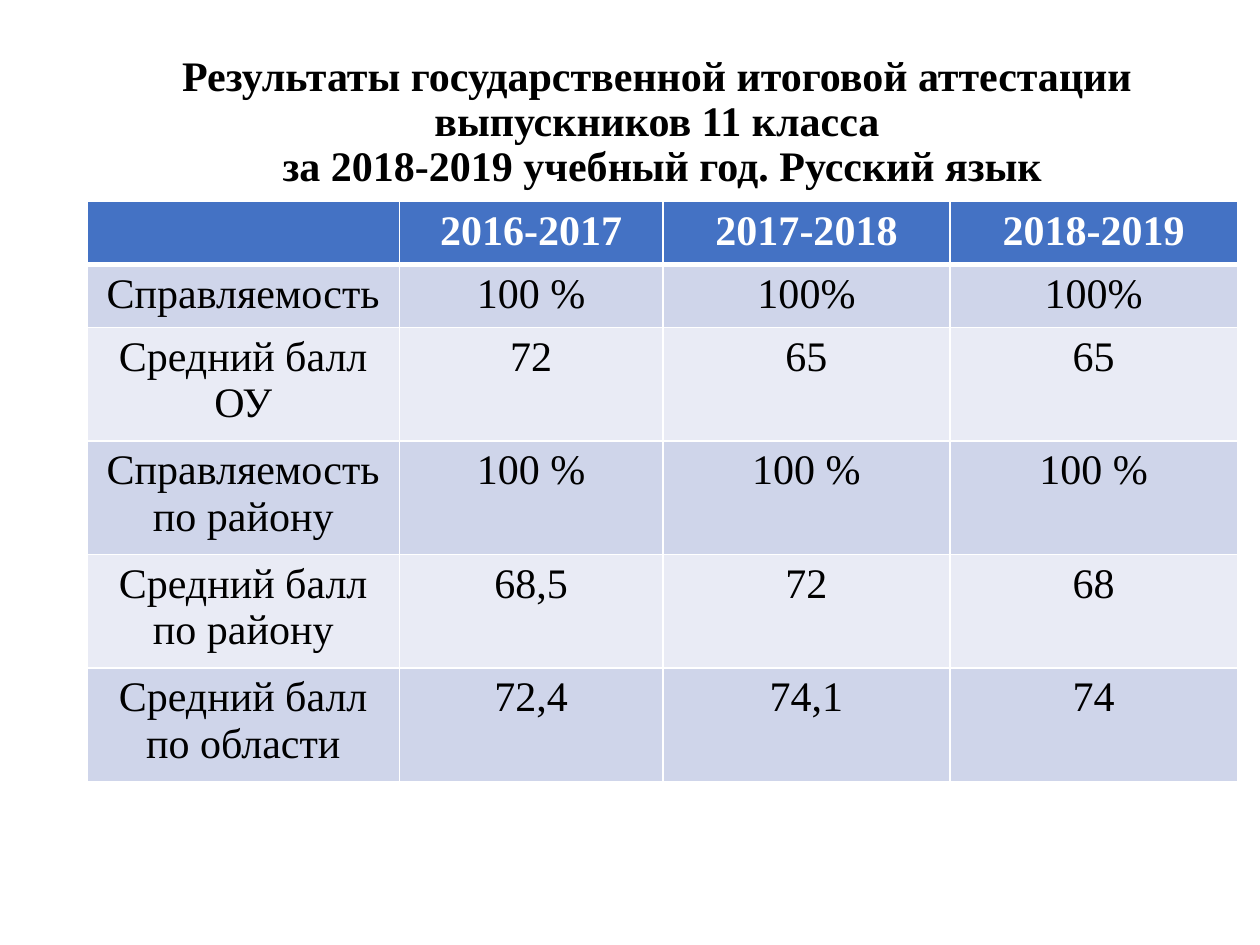
"""Build a slide with the final exam results in Russian for three school years."""
from dataclasses import dataclass

from lxml import etree
from pptx import Presentation
from pptx.dml.color import RGBColor
from pptx.enum.text import MSO_ANCHOR, PP_ALIGN
from pptx.oxml.ns import qn
from pptx.util import Pt

CENTER = PP_ALIGN.CENTER
MIDDLE = MSO_ANCHOR.MIDDLE

HEADING = (
    "Результаты государственной итоговой аттестации \v"
    "выпускников 11 класса \v"
    "за 2018-2019 учебный год. Русский язык"
)
RESULTS = [
    ("", "2016-2017", "2017-2018", "2018-2019"),
    ("Справляемость", "100 %", "100%", "100%"),
    ("Средний балл ОУ", "72", "65", "65"),
    ("Справляемость по району", "100 %", "100 %", "100 %"),
    ("Средний балл по району", "68,5", "72", "68"),
    ("Средний балл по области", "72,4", "74,1", "74"),
]


@dataclass(frozen=True)
class Theme:
    font: str = "Times New Roman"
    size: int = 24
    text: str = "000000"
    header_text: str = "FFFFFF"
    header_fill: str = "4472C4"
    bands: tuple = ("E9EBF5", "CFD5EA")
    rule: str = "FFFFFF"
    rule_width: int = 1
    header_rule_width: int = 3


THEME = Theme()
LEFT, WIDTH = 49.7, 657.4
HEADING_TOP, HEADING_HEIGHT = 15.1, 110.2
RESULTS_TOP, ROW_HEIGHT = 115.2, 29.5
COLUMN_WIDTHS = (178.6, 150.5, 164.15, 164.15)


def style(paragraph, color, bold):
    paragraph.alignment = CENTER
    font = paragraph.font
    font.name = THEME.font
    font.size = Pt(THEME.size)
    font.bold = bold
    font.color.rgb = RGBColor.from_string(color)


def add_borders(cell, top_width, bottom_width):
    properties = cell._tc.get_or_add_tcPr()
    widths = {"L": THEME.rule_width, "R": THEME.rule_width, "T": top_width, "B": bottom_width}
    for position, (side, width) in enumerate(widths.items()):
        line = etree.Element(qn(f"a:ln{side}"), w=str(Pt(width)))
        fill = etree.SubElement(line, qn("a:solidFill"))
        etree.SubElement(fill, qn("a:srgbClr"), val=THEME.rule)
        properties.insert(position, line)


def add_heading(slide):
    box = slide.shapes.add_textbox(Pt(LEFT), Pt(HEADING_TOP), Pt(WIDTH), Pt(HEADING_HEIGHT))
    frame = box.text_frame
    frame.word_wrap = True
    frame.vertical_anchor = MIDDLE
    heading = frame.paragraphs[0]
    heading.text = HEADING
    heading.line_spacing = 0.9
    style(heading, THEME.text, True)


def add_results(slide):
    table = slide.shapes.add_table(
        len(RESULTS), len(COLUMN_WIDTHS), Pt(LEFT), Pt(RESULTS_TOP),
        Pt(WIDTH), Pt(ROW_HEIGHT * len(RESULTS)),
    ).table
    for column, width in zip(table.columns, COLUMN_WIDTHS):
        column.width = Pt(width)
    for row, values in enumerate(RESULTS):
        header = row == 0
        fill = THEME.header_fill if header else THEME.bands[row % 2]
        color = THEME.header_text if header else THEME.text
        top = THEME.header_rule_width if row == 1 else THEME.rule_width
        bottom = THEME.header_rule_width if header else THEME.rule_width
        for column, value in enumerate(values):
            cell = table.cell(row, column)
            cell.text = value
            cell.fill.solid()
            cell.fill.fore_color.rgb = RGBColor.from_string(fill)
            style(cell.text_frame.paragraphs[0], color, header)
            add_borders(cell, top, bottom)


def main():
    presentation = Presentation()
    presentation.slide_width, presentation.slide_height = Pt(720), Pt(540)
    slide = presentation.slides.add_slide(presentation.slide_layouts[6])
    add_heading(slide)
    add_results(slide)
    presentation.save("out.pptx")


if __name__ == "__main__":
    main()
